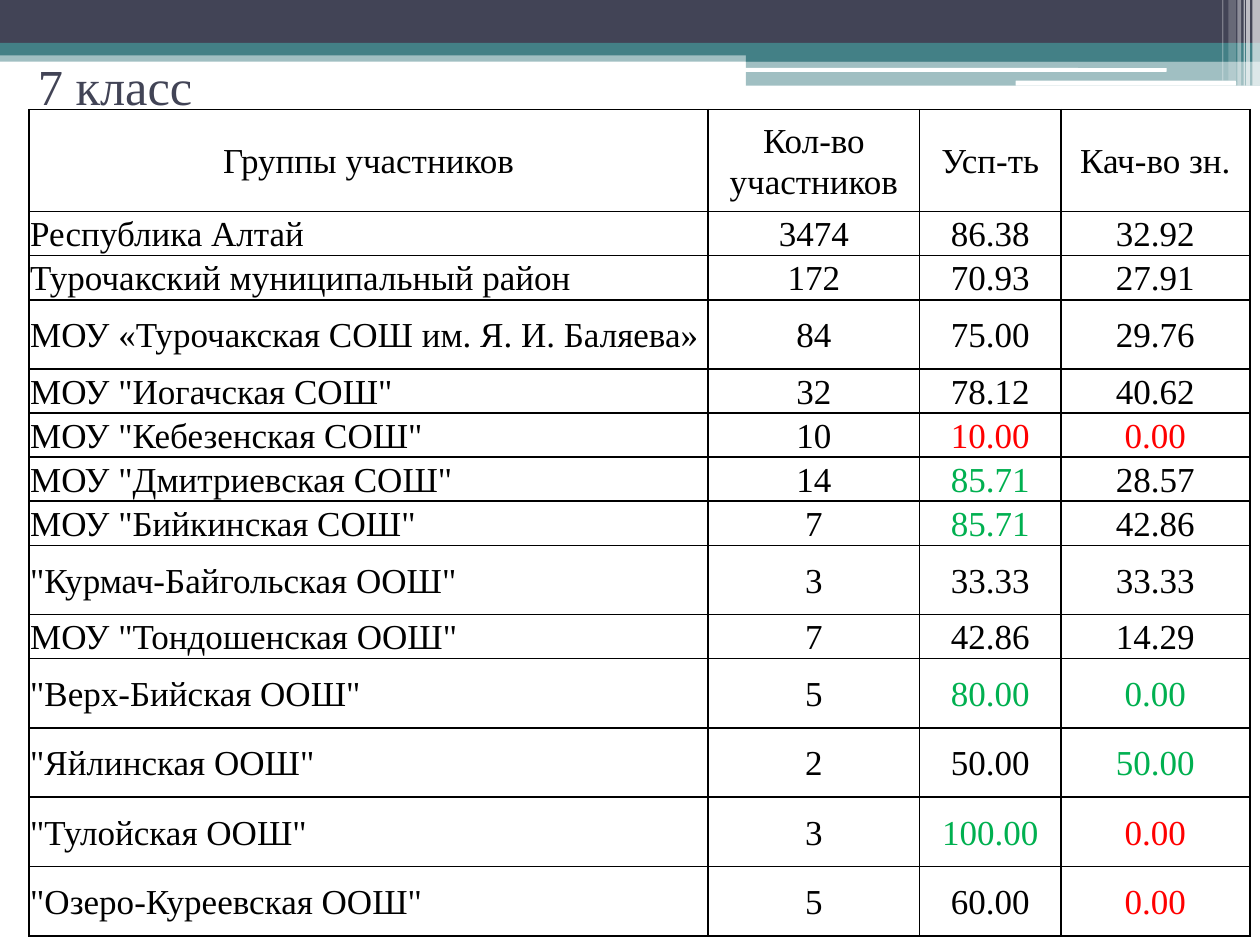
import pptx
import pptx.util
import pptx.dml.color
import pptx.enum.shapes
import pptx.enum.text
import pptx.oxml
import pptx.oxml.ns

# The slide is a grid of 1000 columns by 750 rows
COLUMNS, ROWS = 1000, 750
UNIT = pptx.util.Inches(0.01)

FONT = "Times New Roman"
DARK, TEAL, WHITE, BLACK = "424456", "438086", "FFFFFF", "000000"
RED, GREEN = "FF0000", "00B050"

HEADINGS = ["Группы участников", "Кол-во участников", "Усп-ть", "Кач-во зн."]
RESULTS = [
    ["Республика Алтай", "3474", "86.38", "32.92"],
    ["Турочакский муниципальный район", "172", "70.93", "27.91"],
    ["МОУ «Турочакская СОШ им. Я. И. Баляева»", "84", "75.00", "29.76"],
    ['МОУ "Иогачская СОШ"', "32", "78.12", "40.62"],
    ['МОУ "Кебезенская СОШ"', "10", "10.00", "0.00"],
    ['МОУ "Дмитриевская СОШ"', "14", "85.71", "28.57"],
    ['МОУ "Бийкинская СОШ"', "7", "85.71", "42.86"],
    ['"Курмач-Байгольская ООШ"', "3", "33.33", "33.33"],
    ['МОУ "Тондошенская ООШ"', "7", "42.86", "14.29"],
    ['"Верх-Бийская ООШ"', "5", "80.00", "0.00"],
    ['"Яйлинская ООШ"', "2", "50.00", "50.00"],
    ['"Тулойская ООШ"', "3", "100.00", "0.00"],
    ['"Озеро-Куреевская ООШ"', "5", "60.00", "0.00"],
]
# Highlighted results by table row and column
HIGHLIGHTS = {
    (5, 2): RED, (5, 3): RED, (6, 2): GREEN, (7, 2): GREEN, (10, 2): GREEN,
    (10, 3): GREEN, (11, 3): GREEN, (12, 2): GREEN, (12, 3): RED, (13, 3): RED,
}
COLUMN_WIDTHS = [539, 168, 112, 150]
HEADING_HEIGHT, LOW_ROW, TALL_ROW = 81, 29, 55
TALL_ROWS = {3, 8, 10, 11, 12, 13}


def color(value):
    return pptx.dml.color.RGBColor.from_string(value)


def write_text(frame, text, size, fill=BLACK, align="LEFT", margins=None, spacing=None):
    """Put one formatted paragraph into a text frame."""
    frame.word_wrap = True
    frame.vertical_anchor = pptx.enum.text.MSO_ANCHOR.MIDDLE
    if margins is not None:
        frame.margin_left = frame.margin_right = margins
        frame.margin_top = frame.margin_bottom = margins
    paragraph = frame.paragraphs[0]
    paragraph.alignment = pptx.enum.text.PP_ALIGN[align]
    if spacing:
        paragraph.line_spacing = spacing
    run = paragraph.add_run()
    run.text = text
    run.font.name = FONT
    run.font.size = pptx.util.Pt(size)
    run.font.color.rgb = color(fill)


def add_bar(slide, box, fill, opacity=100, rounded=False):
    kinds = pptx.enum.shapes.MSO_SHAPE
    kind = kinds.ROUNDED_RECTANGLE if rounded else kinds.RECTANGLE
    shape = slide.shapes.add_shape(kind, *(int(length * UNIT) for length in box))
    shape.shadow.inherit = False
    shape.line.fill.background()
    shape.fill.solid()
    shape.fill.fore_color.rgb = color(fill)
    if opacity < 100:
        value = shape.fill._xPr.find(".//" + pptx.oxml.ns.qn("a:srgbClr"))
        alpha = pptx.oxml.parse_xml(
            f'<a:alpha {pptx.oxml.ns.nsdecls("a")} val="{opacity * 1000}"/>')
        value.append(alpha)


def add_header_band(slide, box):
    left, top, width, height = box
    right = left + width

    # Full-width stripes
    for offset, depth, fill, opacity in [(40, 9, TEAL, 50), (0, 34, DARK, 100),
                                         (34, 10, TEAL, 100)]:
        add_bar(slide, (left, top + offset, width, depth), fill, opacity)

    # Step on the right, with two white rules
    step = 408
    add_bar(slide, (right - step, top + 39, step, 10), TEAL)
    add_bar(slide, (right - step, top + 48, step, height - 48), TEAL, 50)
    add_bar(slide, (right - 409, top + 54, 335, 3), WHITE, rounded=True)
    add_bar(slide, (right - 194, top + 64, 175, 4), WHITE, rounded=True)

    # Translucent vertical strips: distance from right, width, height, opacity
    for distance, thickness, depth, opacity in [
            (6, 6, height, 65), (11, 3, height, 65), (13, 1, height, 60),
            (18, 3, height, 40), (25, 6, height - 4, 20), (30, 1, height - 4, 30)]:
        add_bar(slide, (right - distance, top, thickness, depth), WHITE, opacity)


def add_title(slide, box, text):
    title = slide.shapes.title
    title.left, title.top, title.width, title.height = (length * UNIT for length in box)
    write_text(title.text_frame, text, size=28.8, fill=DARK)
    # Bring the title in front of the header band
    slide.shapes._spTree.append(title._element)


def set_borders(cell, fill=BLACK, width=1):
    properties = cell._tc.get_or_add_tcPr()
    for position, side in enumerate(("lnL", "lnR", "lnT", "lnB")):
        properties.insert(position, pptx.oxml.parse_xml(
            f'<a:{side} {pptx.oxml.ns.nsdecls("a")} w="{pptx.util.Pt(width)}">'
            f'<a:solidFill><a:srgbClr val="{fill}"/></a:solidFill></a:{side}>'))


def add_results_table(slide, left, top):
    records = [HEADINGS] + RESULTS
    heights = [HEADING_HEIGHT] + [TALL_ROW if row in TALL_ROWS else LOW_ROW
                                  for row in range(1, len(records))]
    lengths = (left, top, sum(COLUMN_WIDTHS), sum(heights))
    frame = slide.shapes.add_table(len(records), len(HEADINGS),
                                   *(length * UNIT for length in lengths))
    table = frame.table
    table.first_row = table.horz_banding = False
    for column, width in zip(table.columns, COLUMN_WIDTHS):
        column.width = width * UNIT
    for row, height in zip(table.rows, heights):
        row.height = height * UNIT

    for row, record in enumerate(records):
        for column, text in enumerate(record):
            cell = table.cell(row, column)
            cell.fill.solid()
            cell.fill.fore_color.rgb = color(WHITE)
            set_borders(cell)
            write_text(cell.text_frame, text, size=20,
                       fill=HIGHLIGHTS.get((row, column), BLACK),
                       align="LEFT" if row and not column else "CENTER",
                       spacing=1.07)
            cell.vertical_anchor = pptx.enum.text.MSO_ANCHOR.MIDDLE
            cell.margin_left = cell.margin_right = UNIT
            cell.margin_top = cell.margin_bottom = UNIT


def main():
    presentation = pptx.Presentation()
    presentation.slide_width = COLUMNS * UNIT
    presentation.slide_height = ROWS * UNIT
    slide = presentation.slides.add_slide(presentation.slide_layouts[5])
    add_header_band(slide, (0, 0, COLUMNS, 68))
    add_title(slide, (20, 36, 930, 63), "7 класс")
    add_results_table(slide, left=23, top=87)
    presentation.save("out.pptx")


if __name__ == "__main__":
    main()
